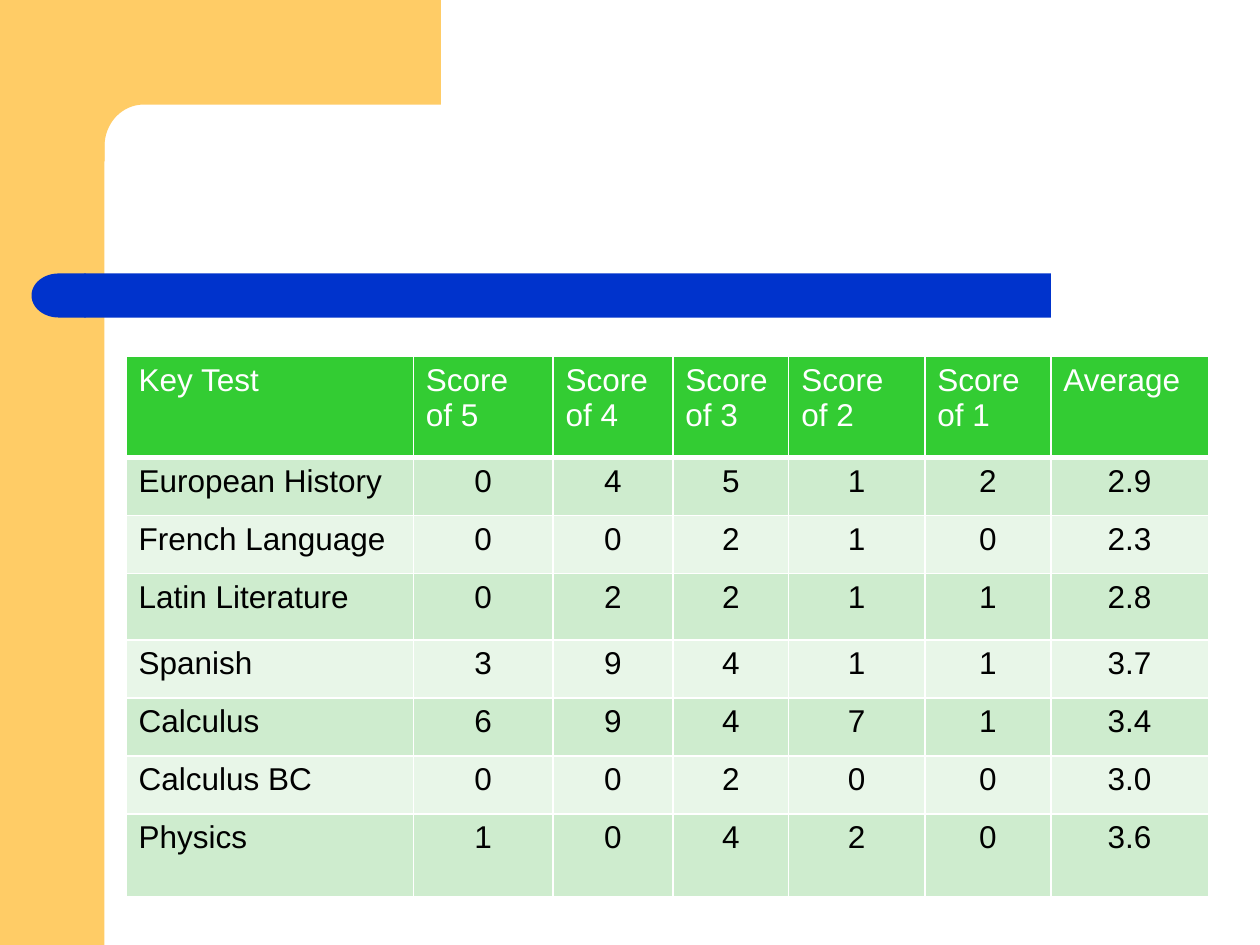
from dataclasses import dataclass
from math import cos, pi, sin

from lxml import etree
from pptx import Presentation
from pptx.dml.color import RGBColor
from pptx.enum.shapes import MSO_SHAPE
from pptx.enum.text import PP_ALIGN
from pptx.oxml.ns import qn
from pptx.util import Inches, Pt

RECTANGLE = MSO_SHAPE.RECTANGLE
ROUNDED = MSO_SHAPE.ROUNDED_RECTANGLE
DELAY = MSO_SHAPE.FLOWCHART_DELAY
LEFT, CENTER = PP_ALIGN.LEFT, PP_ALIGN.CENTER


@dataclass(frozen=True)
class Theme:
    font: str = "Arial"
    size: int = 18
    amber: str = "FFCC66"
    blue: str = "0033CC"
    header: str = "33CC33"
    bands: tuple = ("CEECCE", "E8F6E8")
    header_text: str = "FFFFFF"
    body_text: str = "000000"
    rule: str = "FFFFFF"
    rule_width: int = 1
    header_rule_width: int = 3


class SlideBuilder:
    def __init__(self, slide, theme):
        self.slide = slide
        self.theme = theme

    def paint(self, shape, color):
        shape.shadow.inherit = False
        shape.fill.solid()
        shape.fill.fore_color.rgb = RGBColor.from_string(color)
        shape.line.fill.background()
        return shape

    def block(self, kind, left, top, width, height, color):
        box = [Inches(v) for v in (left, top, width, height)]
        return self.paint(self.slide.shapes.add_shape(kind, *box), color)

    def outline(self, points, color):
        start, *rest = [(Inches(x), Inches(y)) for x, y in points]
        builder = self.slide.shapes.build_freeform(*start)
        builder.add_line_segments(rest, close=True)
        return self.paint(builder.convert_to_shape(), color)

    def borders(self, cell, bottom_width):
        properties = cell._tc.get_or_add_tcPr()
        widths = dict.fromkeys(("lnL", "lnR", "lnT"), self.theme.rule_width)
        widths["lnB"] = bottom_width
        for position, (side, width) in enumerate(widths.items()):
            line = etree.Element(qn(f"a:{side}"), w=str(Pt(width)))
            fill = etree.SubElement(line, qn("a:solidFill"))
            etree.SubElement(fill, qn("a:srgbClr"), val=self.theme.rule)
            properties.insert(position, line)

    def cell(self, cell, text, fill, color, align, bottom_width):
        cell.fill.solid()
        cell.fill.fore_color.rgb = RGBColor.from_string(fill)
        self.borders(cell, bottom_width)
        cell.text = text
        paragraph = cell.text_frame.paragraphs[0]
        paragraph.alignment = align
        paragraph.font.name = self.theme.font
        paragraph.font.size = Pt(self.theme.size)
        paragraph.font.color.rgb = RGBColor.from_string(color)

    def table(self, left, top, widths, heights, rows):
        theme = self.theme
        table = self.slide.shapes.add_table(
            len(rows), len(widths), Inches(left), Inches(top),
            Inches(sum(widths)), Inches(sum(heights))).table
        for column, width in zip(table.columns, widths):
            column.width = Inches(width)
        for r, (height, values) in enumerate(zip(heights, rows)):
            table.rows[r].height = Inches(height)
            for c, value in enumerate(values):
                if r == 0:
                    style = (theme.header, theme.header_text, LEFT,
                             theme.header_rule_width)
                else:
                    style = (theme.bands[(r - 1) % 2], theme.body_text,
                             CENTER if c else LEFT, theme.rule_width)
                self.cell(table.cell(r, c), value, *style)


SCORES = [
    ("Key Test", *(f"Score of {n}" for n in range(5, 0, -1)), "Average"),
    ("European History", "0", "4", "5", "1", "2", "2.9"),
    ("French Language", "0", "0", "2", "1", "0", "2.3"),
    ("Latin Literature", "0", "2", "2", "1", "1", "2.8"),
    ("Spanish", "3", "9", "4", "1", "1", "3.7"),
    ("Calculus", "6", "9", "4", "7", "1", "3.4"),
    ("Calculus BC", "0", "0", "2", "0", "0", "3.0"),
    ("Physics", "1", "0", "4", "2", "0", "3.6"),
]


def inner_corner(center_x, center_y, radius_x, radius_y, steps=16):
    """Quarter ellipse running from its top to its left end."""
    angles = [pi / 2 * step / steps for step in range(steps + 1)]
    return [(center_x - radius_x * sin(a), center_y - radius_y * cos(a))
            for a in angles]


def main():
    deck = Presentation()
    deck.slide_width, deck.slide_height = Inches(10), Inches(7.5)
    theme = Theme()
    page = SlideBuilder(deck.slides.add_slide(deck.slide_layouts[6]), theme)

    # Amber side band and top arm with a rounded inner corner
    page.block(RECTANGLE, 0, 0, 0.83, 7.5, theme.amber)
    page.outline([(0.5, 0), (3.5, 0), (3.5, 0.83),
                  *inner_corner(1.14, 1.16, 0.31, 0.33),
                  (0.83, 1.28), (0.5, 1.28)], theme.amber)

    # Blue title bar with a rounded left cap
    bar = page.block(ROUNDED, 0.67, 2.17, 7.67, 0.35, theme.blue)
    bar.adjustments[0] = 0
    cap = page.block(DELAY, 0.25, 2.17, 0.43, 0.35, theme.blue)
    cap.rotation = 180

    # Score table
    page.table(1, 2.83, [2.28, 1.11, 0.95, 0.92, 1.08, 1, 1.25],
               [0.8, 0.46, 0.46, 0.53, 0.46, 0.46, 0.46, 0.66], SCORES)

    deck.save("out.pptx")


if __name__ == "__main__":
    main()
